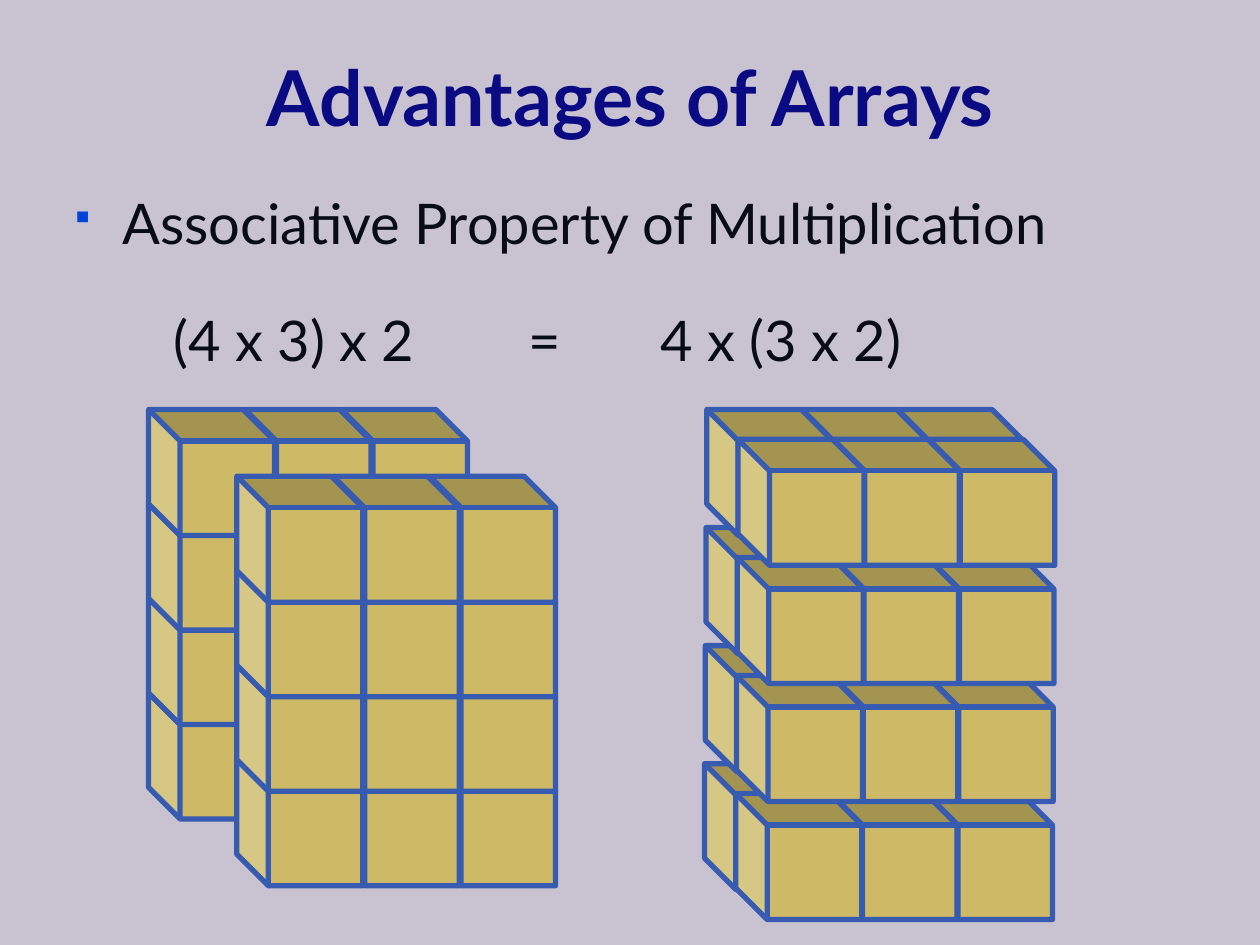
from dataclasses import dataclass

from lxml.etree import SubElement
from pptx import Presentation
from pptx.dml.color import RGBColor as Color
from pptx.enum.shapes import MSO_SHAPE as Preset
from pptx.enum.text import MSO_ANCHOR as Anchor, MSO_AUTO_SIZE as AutoSize, PP_ALIGN as Align
from pptx.oxml.ns import qn
from pptx.util import Inches, Pt

PAGE_WIDTH, PAGE_HEIGHT = 10, 7.5
WALL_COLUMN, TIER_COLUMN, ROW = 0.765, 0.757, 0.75
CUBE_SIZE = 1
DEPTH_X, DEPTH_Y = 0.247, 0.237
TIER_PITCH, TIER_DRIFT = 0.937, 0.006

BACKGROUND = Color(0xC9, 0xC2, 0xD1)
CUBE_FILL = Color(0xCE, 0xB9, 0x66)
CUBE_LINE = Color(0x36, 0x5B, 0xB0)
TITLE_COLOR = Color(0x0A, 0x0A, 0x82)
BODY_COLOR = Color(0x07, 0x0C, 0x17)
BULLET_COLOR = Color(0x00, 0x43, 0xDA)
FONT, BULLET_FONT = "Lato", "Wingdings"


@dataclass(frozen=True)
class CubeWall:
    left: float
    top: float
    columns: int
    rows: int
    column_width: float = WALL_COLUMN


BACK_WALL = CubeWall(1.18, 3.25, 3, 4)
FRONT_WALL = CubeWall(1.88, 3.78, 3, 4)
TOP_TIER = CubeWall(5.61, 3.25, 3, 1, TIER_COLUMN)
TIERS = 4


def place(box, left: float, top: float, width: float, height: float) -> None:
    box.left, box.width = Inches(left * PAGE_WIDTH), Inches(width * PAGE_WIDTH)
    box.top, box.height = Inches(top * PAGE_HEIGHT), Inches(height * PAGE_HEIGHT)


def write(para, text: str, *, size: float, color: Color, bold: bool = False,
          align: Align = Align.LEFT, before: float = 0, spacing: float = 0) -> None:
    para.alignment = align
    para.space_before = Pt(before)
    span = para.add_run()
    span.text = text
    span.font.name = FONT
    span.font.size = Pt(size)
    span.font.bold = bold
    span.font.color.rgb = color
    if spacing:
        span._r.get_or_add_rPr().set("spc", str(round(spacing * 100)))


def set_indent(para, margin: float, first_line: float):
    properties = para._p.get_or_add_pPr()
    properties.set("marL", str(Inches(margin)))
    properties.set("indent", str(Inches(first_line)))
    return properties


def add_bullet(para) -> None:
    properties = set_indent(para, 0.38, -0.38)
    color = SubElement(properties, qn("a:buClr"))
    SubElement(color, qn("a:srgbClr"), val=str(BULLET_COLOR))
    SubElement(properties, qn("a:buSzPct"), val="65000")
    SubElement(properties, qn("a:buFont"), typeface=BULLET_FONT, charset="2")
    SubElement(properties, qn("a:buChar"), char="§")


def draw_cube(shapes, left: float, top: float) -> None:
    cube = shapes.add_shape(Preset.CUBE, Inches(left), Inches(top),
                            Inches(CUBE_SIZE), Inches(CUBE_SIZE))
    cube.rotation = 270
    cube.adjustments[0] = 0.25
    cube.shadow.inherit = False
    cube.fill.solid()
    cube.fill.fore_color.rgb = CUBE_FILL
    cube.line.color.rgb = CUBE_LINE
    cube.line.width = Pt(3)


def draw_wall(shapes, wall: CubeWall) -> None:
    for column in reversed(range(wall.columns)):
        for row in reversed(range(wall.rows)):
            draw_cube(shapes, wall.left + column * wall.column_width, wall.top + row * ROW)


def draw_tier(shapes, tier: int) -> None:
    left = TOP_TIER.left - tier * TIER_DRIFT
    top = TOP_TIER.top + tier * TIER_PITCH
    for layer in range(2):
        draw_wall(shapes, CubeWall(left + layer * DEPTH_X, top + layer * DEPTH_Y,
                                   TOP_TIER.columns, TOP_TIER.rows, TOP_TIER.column_width))


def main() -> None:
    deck = Presentation()
    deck.slide_width, deck.slide_height = Inches(PAGE_WIDTH), Inches(PAGE_HEIGHT)
    page = deck.slides.add_slide(deck.slide_layouts[1])
    page.background.fill.solid()
    page.background.fill.fore_color.rgb = BACKGROUND

    title, body = page.placeholders
    place(title, 0.017, 0.023, 0.967, 0.156)
    place(body, 0.049, 0.193, 0.867, 0.608)
    for box, anchor in ((title, Anchor.MIDDLE), (body, Anchor.TOP)):
        box.text_frame.word_wrap = True
        box.text_frame.auto_size = AutoSize.NONE
        box.text_frame.vertical_anchor = anchor

    write(title.text_frame.paragraphs[0], "Advantages of Arrays",
          size=44, color=TITLE_COLOR, bold=True, align=Align.CENTER)
    heading = body.text_frame.paragraphs[0]
    write(heading, "Associative Property of Multiplication",
          size=32, color=BODY_COLOR, before=6.4)
    add_bullet(heading)
    equation = body.text_frame.add_paragraph()
    for text, spacing in (("(4 x 3) x 2", 0), (" ", 56.9), ("=", 0),
                          (" ", 48.8), ("4 x (3 x 2)", 0)):
        write(equation, text, size=32, color=BODY_COLOR, before=28.5, spacing=spacing)
    SubElement(set_indent(equation, 0.79, 0), qn("a:buNone"))

    for wall in (BACK_WALL, FRONT_WALL):
        draw_wall(page.shapes.add_group_shape().shapes, wall)
    for tier in reversed(range(TIERS)):
        draw_tier(page.shapes, tier)

    deck.save("out.pptx")


if __name__ == "__main__":
    main()
